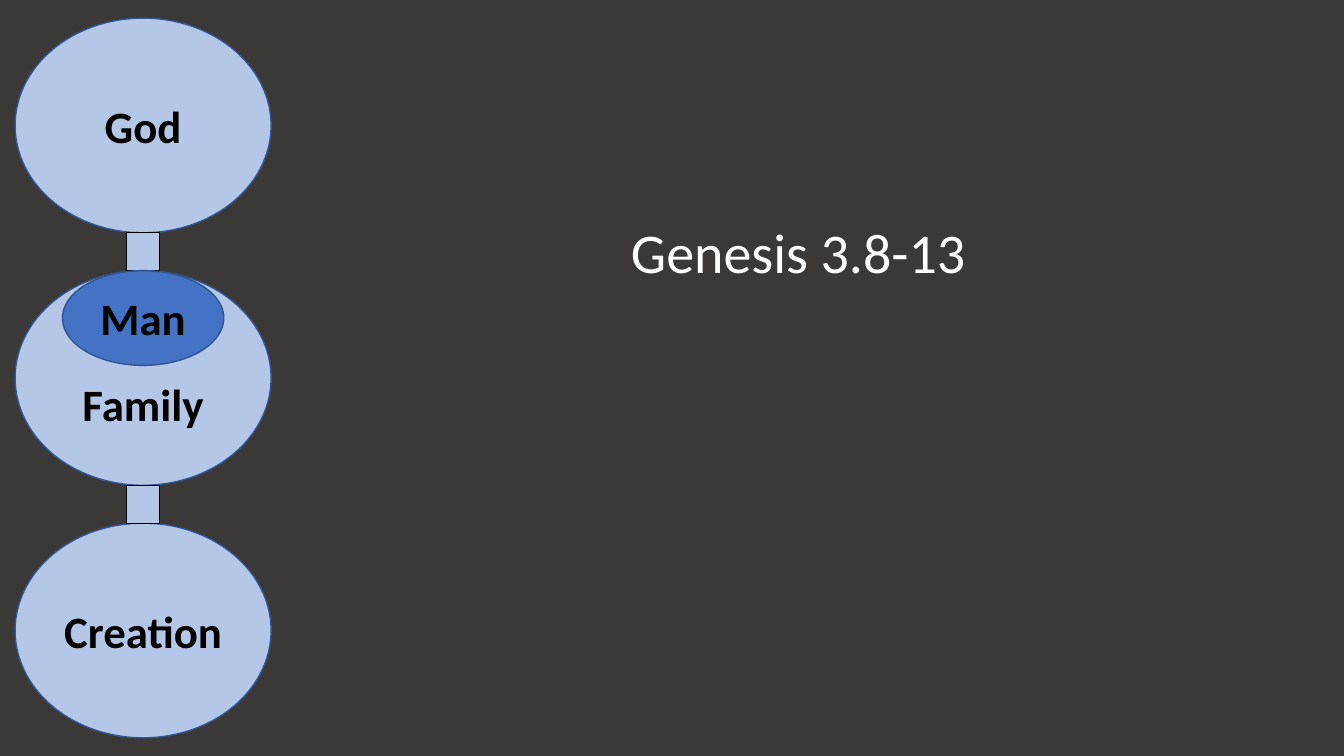
import dataclasses

import pptx
import pptx.dml.color
import pptx.enum.shapes
import pptx.enum.text
import pptx.util

ALIGN = pptx.enum.text.PP_ALIGN
ANCHOR = pptx.enum.text.MSO_ANCHOR
FIT = pptx.enum.text.MSO_AUTO_SIZE
SHAPE = pptx.enum.shapes.MSO_SHAPE


@dataclasses.dataclass(frozen=True)
class Theme:
    background: str = "3B3838"
    pale: str = "B4C7E7"
    accent: str = "4472C4"
    outline: str = "325491"
    dark: str = "000000"
    light: str = "FFFFFF"
    font: str = "Calibri"
    label_size: float = 32
    reference_size: float = 40
    circle_line: float = 1
    link_line: float = 0.75


def rgb(value):
    return pptx.dml.color.RGBColor.from_string(value)


def apply_formats(target, formats):
    for attribute, value in formats.items():
        setattr(target, attribute, value)


class SlideBuilder:
    """Places elements on a grid of 80 columns by 45 rows."""

    COLUMNS, ROWS = 80, 45

    def __init__(self, presentation, theme):
        self.theme = theme
        self.column = presentation.slide_width / self.COLUMNS
        self.row = presentation.slide_height / self.ROWS
        self.slide = presentation.slides.add_slide(presentation.slide_layouts[5])
        fill = self.slide.background.fill
        fill.solid()
        fill.fore_color.rgb = rgb(theme.background)
        self.chain = self.slide.shapes.add_group_shape()

    def box(self, left, top, width, height):
        return {
            "left": round(left * self.column),
            "top": round(top * self.row),
            "width": round(width * self.column),
            "height": round(height * self.row),
        }

    def label(self, shape, text, size, color, bold, align, frame_formats):
        apply_formats(shape.text_frame, {"word_wrap": True, **frame_formats})
        paragraph = shape.text_frame.paragraphs[0]
        paragraph.alignment = align
        run = paragraph.add_run()
        run.text = text
        apply_formats(run.font, {
            "name": self.theme.font,
            "size": pptx.util.Pt(size),
            "bold": bold,
        })
        run.font.color.rgb = rgb(color)

    def outlined(self, kind, center, top, width, height, fill, line, weight):
        area = self.box(center - width / 2, top, width, height)
        shape = self.chain.shapes.add_shape(kind, *area.values())
        shape.shadow.inherit = False
        shape.fill.solid()
        shape.fill.fore_color.rgb = rgb(fill)
        shape.line.color.rgb = rgb(line)
        shape.line.width = pptx.util.Pt(weight)
        return shape

    def circle(self, text, center, top, width, height, fill, drop=0):
        theme = self.theme
        circle = self.outlined(SHAPE.OVAL, center, top, width, height,
                               fill, theme.outline, theme.circle_line)
        self.label(circle, text, theme.label_size, theme.dark, True, ALIGN.CENTER, {
            "vertical_anchor": ANCHOR.MIDDLE,
            "margin_top": pptx.util.Inches(0.05) + round(drop * self.row),
        })

    def link(self, center, top, width, height):
        theme = self.theme
        self.outlined(SHAPE.RECTANGLE, center, top, width, height,
                      theme.pale, theme.dark, theme.link_line)

    def title(self, text, left, top, width, height):
        title = self.slide.shapes.title
        apply_formats(title, self.box(left, top, width, height))
        self.label(title, text, self.theme.reference_size, self.theme.light, False, ALIGN.LEFT, {
            "vertical_anchor": ANCHOR.TOP,
            "auto_size": FIT.SHAPE_TO_FIT_TEXT,
        })


def main():
    presentation = pptx.Presentation()
    apply_formats(presentation, {
        "slide_width": pptx.util.Inches(13.33),
        "slide_height": pptx.util.Inches(7.5),
    })
    theme = Theme()
    builder = SlideBuilder(presentation, theme)

    # Chain of relationships
    center, first_top, pitch = 8.52, 1.08, 15.03
    circle_width, circle_height = 15.24, 12.78
    family_drop = 3.05
    relations = [("God", 0), ("Family", family_drop), ("Creation", 0)]
    tops = [first_top + pitch * position for position in range(len(relations))]
    for (name, drop), top in zip(relations, tops):
        builder.circle(name, center, top, circle_width, circle_height, theme.pale, drop)

    # Links between neighbouring circles
    for top in tops[:-1]:
        builder.link(center, top + circle_height, 2, pitch - circle_height)

    # Man at the head of the family
    builder.circle("Man", center, tops[1], 9.6, 5.64, theme.accent)

    # Scripture reference
    builder.title("Genesis 3.8-13", 36.96, 12.66, 24.72, 4.62)

    presentation.save("out.pptx")


if __name__ == "__main__":
    main()
